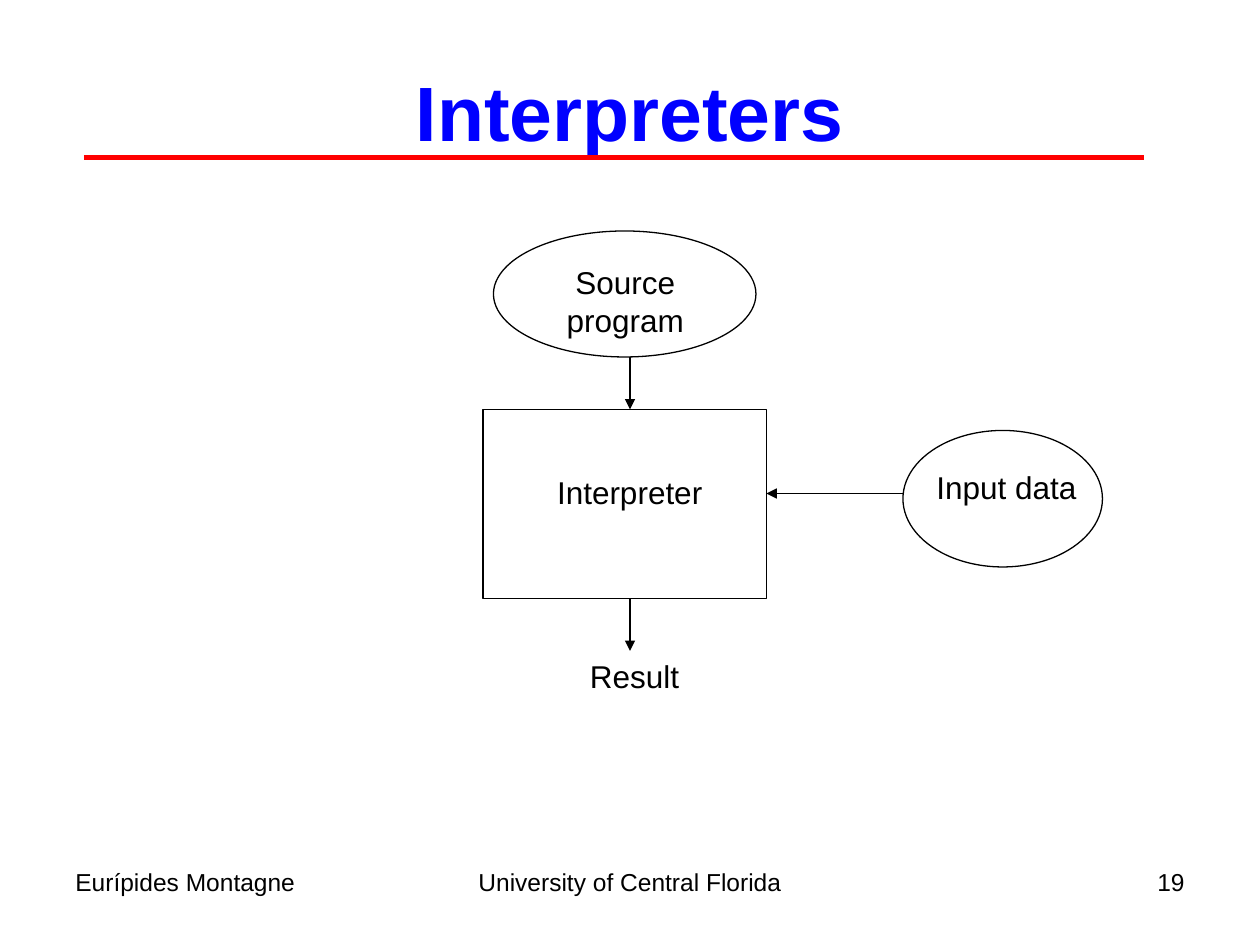
"""Build a slide that shows how an interpreter turns a source program and input data into a result."""
from lxml import etree
from pptx import Presentation
from pptx import util as u
from pptx.dml.color import RGBColor
from pptx.enum import shapes, text
from pptx.oxml.ns import qn

PX = 9525
FONT = "Arial"
BLACK, BLUE, RED = "000000", "0000FF", "FF0000"
LEFT, CENTER, RIGHT = text.PP_ALIGN.LEFT, text.PP_ALIGN.CENTER, text.PP_ALIGN.RIGHT
OVAL, RECTANGLE = shapes.MSO_SHAPE.OVAL, shapes.MSO_SHAPE.RECTANGLE

TITLE = ("Interpreters", (48, 24, 864, 120))
FOOTERS = [
    ("Eurípides Montagne", (48, 656, 224, 50), LEFT),
    ("University of Central Florida", (328, 656, 304, 50), CENTER),
    ("19", (688, 656, 224, 50), RIGHT),
]
NODES = [
    (OVAL, (376, 176, 200, 96)),
    (RECTANGLE, (368, 312, 216, 144)),
    (OVAL, (688, 328, 152, 104)),
]
LABELS = [
    ("Source\nprogram", (422, 196, 109, 67), CENTER),
    ("Interpreter", (415, 356, 130, 38), LEFT),
    ("Input data", (704, 352, 126, 38), LEFT),
    ("Result", (440, 496, 87, 38), LEFT),
]
RULE = (64, 120, 872, 120)
ARROWS = [(480, 272, 480, 312), (688, 376, 584, 376), (480, 456, 480, 496)]


def px(lengths):
    return [u.Emu(length * PX) for length in lengths]


def color(value):
    return RGBColor.from_string(value)


def write(shape, words, size, align, ink=BLACK, bold=False):
    shape.text_frame.text = words
    for paragraph in shape.text_frame.paragraphs:
        paragraph.alignment = align
        for run in paragraph.runs:
            run.font.name, run.font.size, run.font.bold = FONT, u.Pt(size), bold
            run.font.color.rgb = color(ink)


def add_text(slide, words, box, size, align, wrap):
    shape = slide.shapes.add_textbox(*px(box))
    shape.text_frame.word_wrap = wrap
    write(shape, words, size, align)


def add_node(slide, kind, box):
    shape = slide.shapes.add_shape(kind, *px(box))
    shape.shadow.inherit = False
    shape.fill.background()
    shape.line.color.rgb = color(BLACK)
    shape.line.width = u.Pt(0.75)


def add_line(slide, ends, ink, width, arrow=False):
    line = slide.shapes.add_connector(shapes.MSO_CONNECTOR.STRAIGHT, *px(ends))
    line.line.color.rgb = color(ink)
    line.line.width = u.Pt(width)
    properties = line._element.spPr
    if arrow:
        etree.SubElement(properties.find(qn("a:ln")), qn("a:tailEnd"), type="triangle")
    etree.SubElement(properties, qn("a:effectLst"))


def main():
    presentation = Presentation()
    presentation.slide_width, presentation.slide_height = px((960, 720))
    slide = presentation.slides.add_slide(presentation.slide_layouts[5])

    title = slide.shapes.title
    words, box = TITLE
    title.left, title.top, title.width, title.height = px(box)
    title.text_frame.vertical_anchor = text.MSO_ANCHOR.MIDDLE
    write(title, words, 44, CENTER, BLUE, True)

    for words, box, align in FOOTERS:
        add_text(slide, words, box, 14, align, True)
    add_line(slide, RULE, RED, 3)
    for kind, box in NODES:
        add_node(slide, kind, box)
    for words, box, align in LABELS:
        add_text(slide, words, box, 18, align, False)
    for ends in ARROWS:
        add_line(slide, ends, BLACK, 0.75, True)

    presentation.save("out.pptx")


if __name__ == "__main__":
    main()
